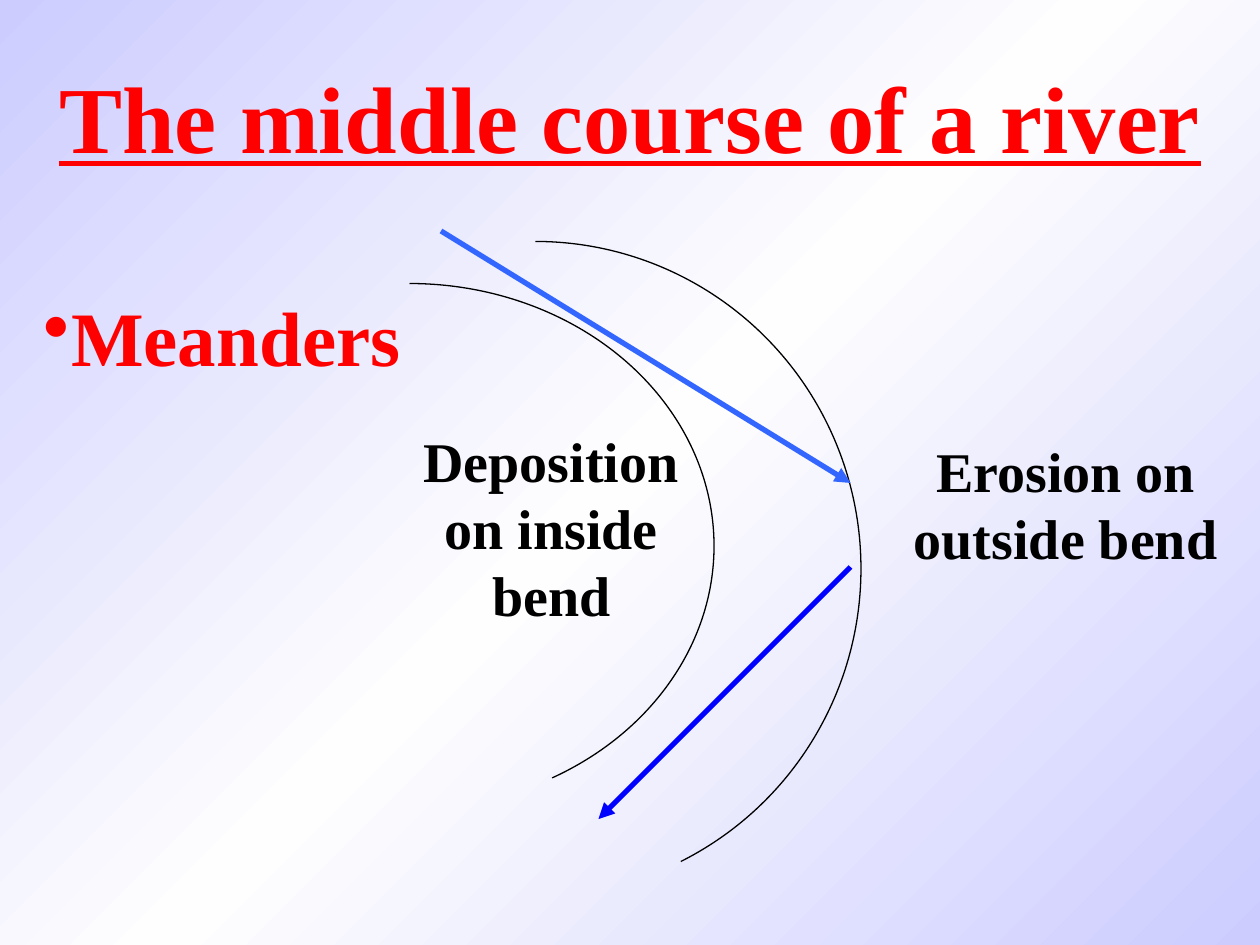
from copy import deepcopy

from pptx import Presentation
from pptx.dml.color import RGBColor
from pptx.enum.shapes import MSO_CONNECTOR as Connector, MSO_SHAPE as Shape
from pptx.enum.text import MSO_ANCHOR as Anchor, PP_ALIGN as Align
from pptx.oxml.ns import qn
from pptx.util import Pt

RED = RGBColor(0xFF, 0x00, 0x00)
BLACK = RGBColor(0x00, 0x00, 0x00)
SKY = RGBColor(0x33, 0x66, 0xFF)
BLUE = RGBColor(0x00, 0x00, 0xFF)
LAVENDER = RGBColor(0xCC, 0xCC, 0xFF)
WHITE = RGBColor(0xFE, 0xFE, 0xFE)
FONT = "Times New Roman"
ARC_UNITS_PER_DEGREE = 0.6


def paint_background(slide):
    """Fill the background with a diagonal lavender-white-lavender gradient."""
    fill = slide.background.fill
    fill.gradient()
    fill.gradient_angle = 135
    for stop in fill.gradient_stops:
        stop.color.rgb = LAVENDER
    stops = slide.element.find(".//" + qn("a:gsLst"))
    middle = deepcopy(stops[0])
    middle.set("pos", "50000")
    middle.find(qn("a:srgbClr")).set("val", str(WHITE))
    stops.insert(1, middle)


def add_text(slide, box, wording, size, color, align=Align.CENTER):
    """Place one bold paragraph in the box and return its text frame."""
    frame = slide.shapes.add_textbox(*map(Pt, box)).text_frame
    frame.word_wrap = True
    paragraph = frame.paragraphs[0]
    paragraph.alignment = align
    run = paragraph.add_run()
    run.text = wording
    run.font.name = FONT
    run.font.size = Pt(size)
    run.font.bold = True
    run.font.color.rgb = color
    return frame


def add_title(slide, box):
    """Place the underlined slide title."""
    title = add_text(slide, box, "The middle course of a river", 54, RED)
    title.vertical_anchor = Anchor.MIDDLE
    title.paragraphs[0].runs[0].font.underline = True


def add_topic(slide, box):
    """Place the bulleted topic."""
    topic = add_text(slide, box, "Meanders", 44, RED, Align.LEFT)
    properties = topic.paragraphs[0]._p.get_or_add_pPr()
    properties.append(properties.makeelement(qn("a:buChar"), {"char": "•"}))


def add_bank(slide, box, end_angle):
    """Draw a river bank as an arc from the top of the box to the end angle."""
    bank = slide.shapes.add_shape(Shape.ARC, *map(Pt, box))
    bank.adjustments[0] = 270 * ARC_UNITS_PER_DEGREE
    bank.adjustments[1] = end_angle * ARC_UNITS_PER_DEGREE
    bank.shadow.inherit = False
    bank.fill.background()
    bank.line.color.rgb = BLACK
    bank.line.width = Pt(0.75)


def add_current(slide, start, end, color):
    """Draw an arrow for the flow of the water."""
    current = slide.shapes.add_connector(
        Connector.STRAIGHT, *map(Pt, start + end))
    current.line.color.rgb = color
    current.line.width = Pt(3)
    line = current.element.find(".//" + qn("a:ln"))
    line.append(line.makeelement(qn("a:tailEnd"), {"type": "triangle"}))
    line.addnext(line.makeelement(qn("a:effectLst"), {}))


def add_meander(slide, box):
    """Draw the river bend with its banks, currents and labels."""
    left, top, width, height = box
    add_bank(slide, (left, top + 24, 348, 300), 58.4)
    add_bank(slide, (left + 60, top, 372, height), 63.6)
    bend = left + 426
    add_current(slide, (left + 192, top - 6), (bend, top + 138), SKY)
    add_current(slide, (bend, top + 186), (bend - 144, top + 330), BLUE)
    add_text(slide, (left + width - 222, top + 108, 222, 84),
             "Erosion on outside bend", 32, BLACK)
    add_text(slide, (left + 156, top + 102, 198, 122),
             "Deposition on inside bend", 32, BLACK)


def main():
    """Build and save the slide."""
    deck = Presentation()
    deck.slide_width, deck.slide_height = Pt(720), Pt(540)
    slide = deck.slides.add_slide(deck.slide_layouts[6])
    paint_background(slide)
    add_title(slide, (0, 24, 720, 84))
    add_topic(slide, (18, 162, 588, 60))
    add_meander(slide, (60, 138, 660, 374))
    deck.save("out.pptx")


if __name__ == "__main__":
    main()
